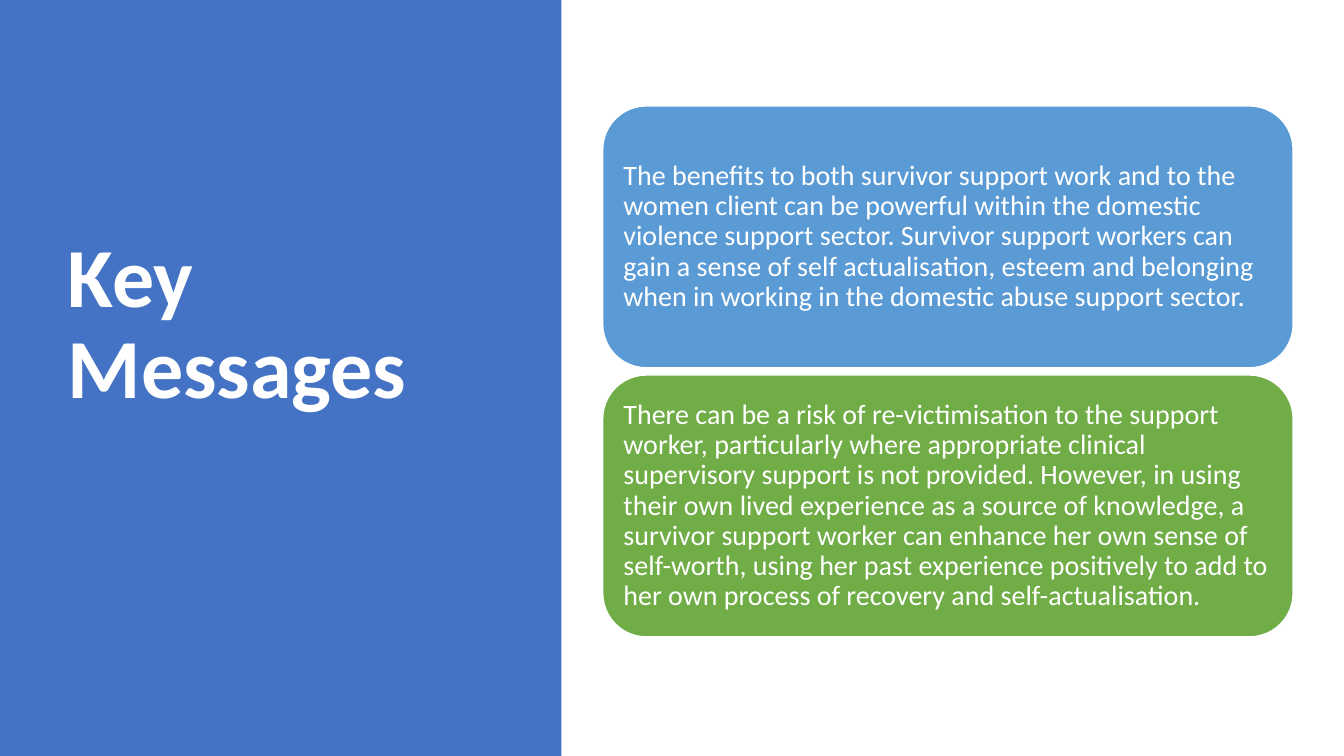
from pptx import Presentation
from pptx.dml.color import RGBColor
from pptx.enum.shapes import MSO_SHAPE
from pptx.enum.text import MSO_ANCHOR, MSO_AUTO_SIZE, PP_ALIGN
from pptx.util import Cm, Pt

WHITE = RGBColor(0xFF, 0xFF, 0xFF)
PANEL_BLUE = RGBColor(0x44, 0x72, 0xC4)
CARD_BLUE = RGBColor(0x5B, 0x9B, 0xD5)
CARD_GREEN = RGBColor(0x70, 0xAD, 0x47)

MESSAGES = [
    (CARD_BLUE, "The benefits to both survivor support work and to the women client can be "
     "powerful within the domestic violence support sector. Survivor support workers can gain "
     "a sense of self actualisation, esteem and belonging when in working in the domestic "
     "abuse support sector."),
    (CARD_GREEN, "There can be a risk of re-victimisation to the support worker, particularly "
     "where appropriate clinical supervisory support is not provided. However, in using their "
     "own lived experience as a source of knowledge, a survivor support worker can enhance her "
     "own sense of self-worth, using her past experience positively to add to her own process "
     "of recovery and self-actualisation."),
]
CARD_TOP, CARD_PITCH = 2.67, 6.78


def set_all(target, values):
    """Set every attribute named in values on target."""
    for name, value in values.items():
        setattr(target, name, value)


def write(shape, text, size, bold, margins):
    """Write one left-aligned white paragraph, centred vertically."""
    frame = shape.text_frame
    frame.text = text
    set_all(frame, {"word_wrap": True, "auto_size": MSO_AUTO_SIZE.NONE,
                    "vertical_anchor": MSO_ANCHOR.MIDDLE, **margins})
    paragraph = frame.paragraphs[0]
    set_all(paragraph, {"alignment": PP_ALIGN.LEFT, "line_spacing": 0.9})
    font = paragraph.runs[0].font
    set_all(font, {"name": "Calibri", "size": Pt(size), "bold": bold})
    font.color.rgb = WHITE


def add_block(slide, kind, box, fill):
    """Add a filled shape without shadow or outline."""
    block = slide.shapes.add_shape(kind, *map(Cm, box))
    block.shadow.inherit = False
    block.fill.solid()
    block.fill.fore_color.rgb = fill
    block.line.fill.background()
    return block


def add_panel(slide):
    """Add the blue panel behind the title."""
    panel = add_block(slide, MSO_SHAPE.RECTANGLE, (0, 0, 14.15, 19.05), PANEL_BLUE)
    slide.shapes.title._element.addprevious(panel._element)


def place_title(slide, text):
    """Place the title on the panel, a little above its middle."""
    title = slide.shapes.title
    set_all(title, {"left": Cm(1.45), "top": Cm(1.73), "width": Cm(10.57), "height": Cm(15.29)})
    write(title, text, 60, True, {"margin_bottom": Cm(2.45)})


def add_card(slide, top, fill, text):
    """Add one rounded message card with a white outline."""
    card = add_block(slide, MSO_SHAPE.ROUNDED_RECTANGLE, (15.19, top, 17.4, 6.6), fill)
    card.line.color.rgb = WHITE
    card.line.width = Pt(1)
    sides = ("left", "top", "right", "bottom")
    write(card, text, 20, False, {f"margin_{side}": Cm(0.2) for side in sides})


def main():
    """Build and save the key messages slide."""
    presentation = Presentation()
    set_all(presentation, {"slide_width": Cm(33.87), "slide_height": Cm(19.05)})
    slide = presentation.slides.add_slide(presentation.slide_layouts[5])
    add_panel(slide)
    place_title(slide, "Key Messages")
    for index, (fill, text) in enumerate(MESSAGES):
        add_card(slide, CARD_TOP + index * CARD_PITCH, fill, text)
    presentation.save("out.pptx")


if __name__ == "__main__":
    main()
